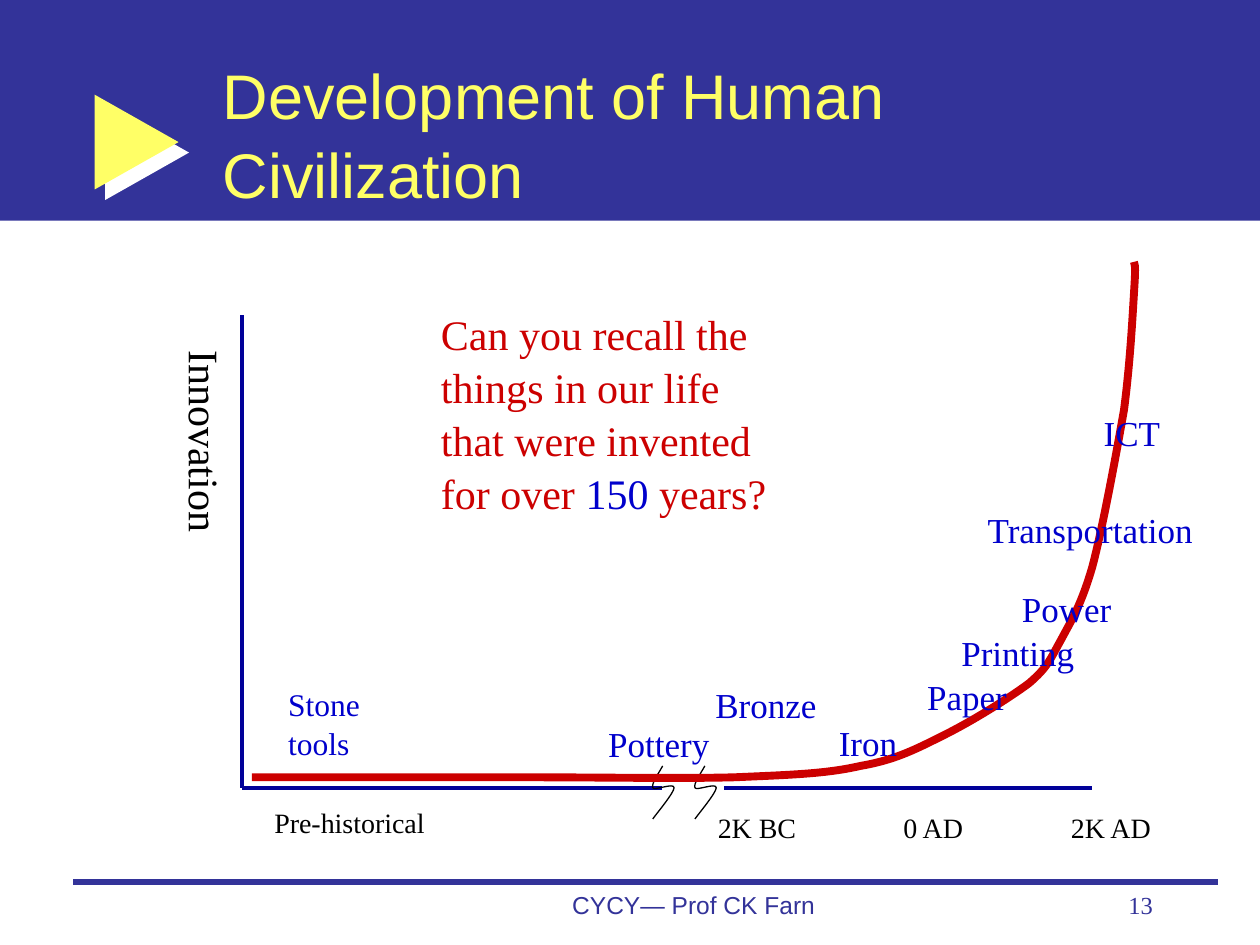
from dataclasses import dataclass

from lxml import etree
from pptx import Presentation
from pptx.dml.color import RGBColor
from pptx.enum.shapes import MSO_CONNECTOR, MSO_SHAPE
from pptx.enum.text import MSO_ANCHOR, MSO_AUTO_SIZE, PP_ALIGN
from pptx.oxml import parse_xml
from pptx.oxml.ns import nsdecls, qn
from pptx.util import Cm, Pt

STRAIGHT = MSO_CONNECTOR.STRAIGHT
RECTANGLE, RIGHT_ARROW = MSO_SHAPE.RECTANGLE, MSO_SHAPE.RIGHT_ARROW
MIDDLE = MSO_ANCHOR.MIDDLE
NO_AUTOFIT = MSO_AUTO_SIZE.NONE
LEFT, CENTER, RIGHT = PP_ALIGN.LEFT, PP_ALIGN.CENTER, PP_ALIGN.RIGHT
TITLE_ONLY_LAYOUT = 5


@dataclass(frozen=True)
class Theme:
    band: RGBColor = RGBColor(0x33, 0x33, 0x99)
    accent: RGBColor = RGBColor(0xFF, 0xFF, 0x66)
    axis: RGBColor = RGBColor(0x00, 0x00, 0x99)
    growth: RGBColor = RGBColor(0xCC, 0x00, 0x00)
    label: RGBColor = RGBColor(0x00, 0x00, 0xCC)
    ink: RGBColor = RGBColor(0x00, 0x00, 0x00)
    sans: str = "Arial"
    serif: str = "Times New Roman"
    title_size: int = 36
    large_size: int = 24
    label_size: int = 20
    stone_size: int = 18
    date_size: int = 16
    footer_size: int = 14
    line_spacing: float = 1.05


THEME = Theme()

# Text, left, top, width
INVENTIONS = [
    ("Pottery", 12.01, 14.4, 2.57),
    ("Bronze", 14.17, 13.61, 2.57),
    ("Iron", 16.66, 14.38, 1.7),
    ("Paper", 18.44, 13.46, 2.13),
    ("Printing", 19.13, 12.57, 2.79),
    ("Power", 20.35, 11.68, 2.34),
    ("Transportation", 19.66, 10.08, 4.67),
    ("ICT", 22, 8.13, 1.65),
]
DATES = [
    ("Pre-historical", 5.28, 16.08, 3.61),
    ("2K BC", 14.22, 16.18, 2.08),
    ("0 AD", 17.96, 16.18, 1.75),
    ("2K AD", 21.34, 16.18, 2.16),
]

# A start point, then two control points and an end point per segment
GROWTH_CURVE = [
    (5.08, 15.67),
    (7.01, 15.67), (8.97, 15.67), (10.59, 15.67),
    (12.22, 15.67), (13.69, 15.7), (14.81, 15.67),
    (15.95, 15.62), (16.66, 15.6), (17.35, 15.44),
    (18.06, 15.32), (18.49, 15.09), (19.05, 14.81),
    (19.61, 14.53), (20.35, 14.07), (20.75, 13.77),
    (21.13, 13.44), (21.16, 13.31), (21.39, 12.9),
    (21.59, 12.52), (21.79, 12.22), (22.02, 11.43),
    (22.23, 10.64), (22.5, 9.17), (22.66, 8.26),
    (22.78, 7.34), (22.83, 6.43), (22.86, 5.92),
    (22.89, 5.44), (22.89, 5.36), (22.86, 5.28),
]
AXIS_BREAK = [
    (13.36, 15.44),
    (13.26, 15.62), (13.13, 15.8), (13.16, 15.88),
    (13.18, 15.95), (13.59, 15.77), (13.59, 15.88),
    (13.59, 15.98), (13.23, 16.41), (13.16, 16.51),
]
BREAK_GAP = 0.85


def add_line(slide, start, end, color, width):
    points = [Cm(value) for value in (*start, *end)]
    connector = slide.shapes.add_connector(STRAIGHT, *points)
    connector.line.color.rgb = color
    connector.line.width = Pt(width)
    etree.SubElement(connector._element.spPr, qn("a:effectLst"))


def add_curve(slide, points, color, width):
    """Draw an open path of cubic curves through every third point."""
    start, *rest = [(Cm(x), Cm(y)) for x, y in points]
    builder = slide.shapes.build_freeform(*start)
    builder.add_line_segments(rest, close=False)
    shape = builder.convert_to_shape()
    shape.shadow.inherit = False
    shape.fill.background()
    shape.line.color.rgb = color
    shape.line.width = Pt(width)

    outline = shape._element.find(".//" + qn("a:path"))
    segments = outline.findall(qn("a:lnTo"))
    for first in range(0, len(segments), 3):
        curve = etree.SubElement(outline, qn("a:cubicBezTo"))
        for segment in segments[first:first + 3]:
            curve.append(segment[0])
            outline.remove(segment)


def add_preset(slide, kind, box, color):
    shape = slide.shapes.add_shape(kind, *map(Cm, box))
    shape.shadow.inherit = False
    shape.fill.solid()
    shape.fill.fore_color.rgb = color
    shape.line.fill.background()
    return shape


def add_run(paragraph, text, size, color, font):
    run = paragraph.add_run()
    run.text = text
    run.font.size = Pt(size)
    run.font.color.rgb = color
    run.font.name = font


def add_text(slide, box, paragraphs, size, font=THEME.serif, align=LEFT, wrap=False):
    """Add a text box; each paragraph is a list of (text, colour) runs."""
    text_box = slide.shapes.add_textbox(*map(Cm, box))
    frame = text_box.text_frame
    frame.word_wrap = wrap
    for index, runs in enumerate(paragraphs):
        paragraph = frame.add_paragraph() if index else frame.paragraphs[0]
        paragraph.alignment = align
        paragraph.line_spacing = THEME.line_spacing
        for text, color in runs:
            add_run(paragraph, text, size, color, font)
    return text_box


def add_header(slide):
    add_preset(slide, RECTANGLE, (0, 0, 25.4, 4.45), THEME.band)
    marker = add_preset(slide, RIGHT_ARROW, (1.91, 1.91, 1.69, 1.91), THEME.accent)
    marker.adjustments[0] = 0.38
    marker.adjustments[1] = 1
    effects = marker._element.spPr.find(qn("a:effectLst"))
    effects.append(parse_xml(
        f'<a:outerShdw {nsdecls("a")} dist="{Pt(8.5)}" dir="2700000" algn="ctr" '
        'rotWithShape="0"><a:srgbClr val="FFFFFF"/></a:outerShdw>'))

    title = slide.shapes.title
    title.left, title.top, title.width, title.height = map(Cm, (4.24, 1.07, 20.1, 3.18))
    frame = title.text_frame
    frame.word_wrap = True
    frame.auto_size = NO_AUTOFIT
    frame.vertical_anchor = MIDDLE
    paragraph = frame.paragraphs[0]
    paragraph.alignment = LEFT
    paragraph.line_spacing = THEME.line_spacing
    add_run(paragraph, "Development of Human Civilization",
            THEME.title_size, THEME.accent, THEME.sans)
    slide.shapes._spTree.append(title._element)  # in front of the band


def add_axes(slide):
    origin = (4.88, 15.88)
    for start, end in [((4.88, 6.35), origin), (origin, (13.34, 15.88)),
                       ((14.6, 15.88), (22.02, 15.88))]:
        add_line(slide, start, end, THEME.axis, 2.25)
    for offset in (0, BREAK_GAP):
        add_curve(slide, [(x + offset, y) for x, y in AXIS_BREAK], THEME.ink, 0.75)
    for text, left, top, width in DATES:
        add_text(slide, (left, top, width, 0.94), [[(text, THEME.ink)]], THEME.date_size)
    axis_name = add_text(slide, (3.28, 6.81, 1.55, 3.96),
                         [[("Innovation", THEME.ink)]], THEME.large_size)
    axis_name.text_frame._txBody.bodyPr.set("vert", "eaVert")


def add_labels(slide):
    question = [
        ("Can you recall the things in our life that were invented for over ", THEME.growth),
        ("150", THEME.label),
        (" years?", THEME.growth),
    ]
    add_text(slide, (8.64, 6.05, 7.06, 4.47), [question], THEME.large_size, wrap=True)
    add_text(slide, (5.56, 13.64, 1.98, 1.8),
             [[("Stone", THEME.label)], [("tools", THEME.label)]], THEME.stone_size)
    for text, left, top, width in INVENTIONS:
        add_text(slide, (left, top, width, 1.12), [[(text, THEME.label)]], THEME.label_size)


def add_footer(slide):
    add_line(slide, (1.48, 17.78), (24.55, 17.78), THEME.band, 3)
    add_text(slide, (9.96, 17.78, 8.05, 1.27), [[("CYCY— Prof CK Farn", THEME.band)]],
             THEME.footer_size, THEME.sans, CENTER, wrap=True)
    add_text(slide, (18.21, 17.78, 5.28, 1.27), [[("13", THEME.band)]],
             THEME.footer_size, align=RIGHT, wrap=True)


def main():
    presentation = Presentation()
    presentation.slide_width, presentation.slide_height = Cm(25.4), Cm(19.05)
    slide = presentation.slides.add_slide(presentation.slide_layouts[TITLE_ONLY_LAYOUT])
    add_header(slide)
    add_axes(slide)
    add_curve(slide, GROWTH_CURVE, THEME.growth, 4.5)
    add_labels(slide)
    add_footer(slide)
    presentation.save("out.pptx")


if __name__ == "__main__":
    main()
